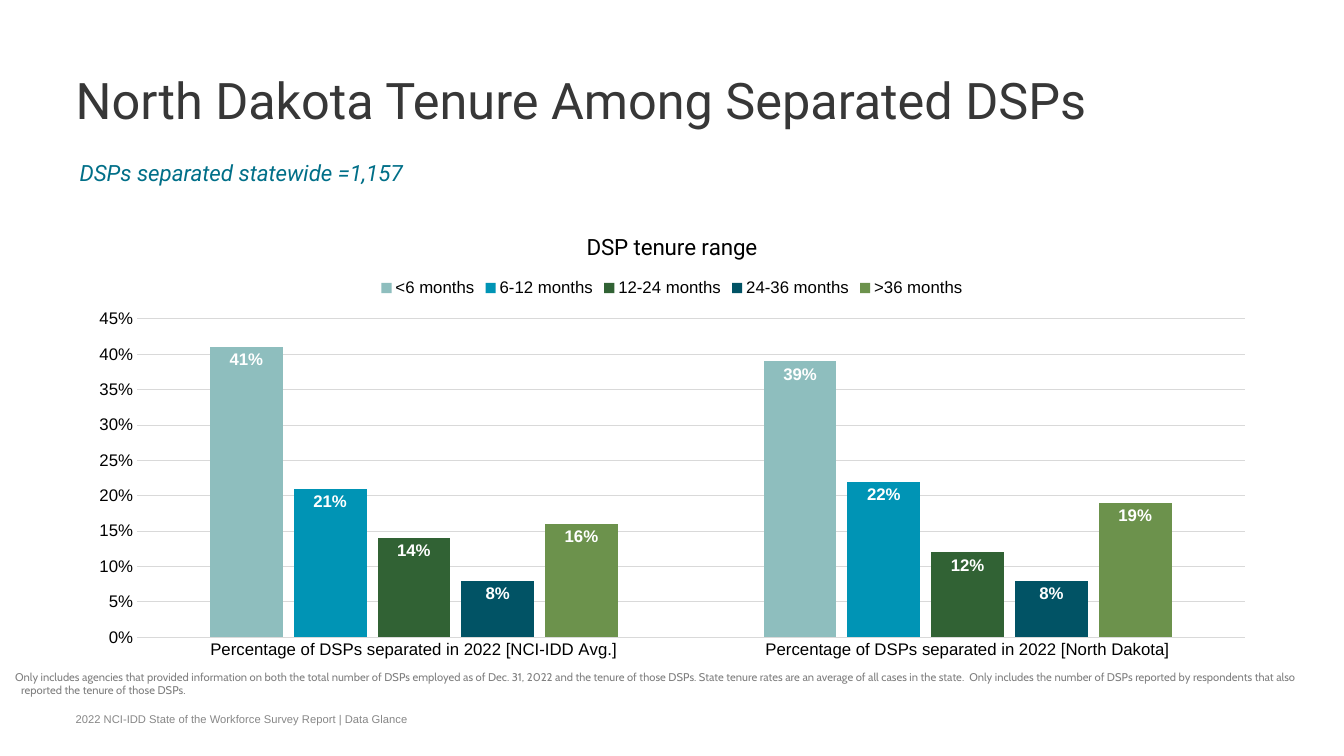
from pptx import Presentation
from pptx.chart.data import CategoryChartData
from pptx.dml.color import RGBColor
from pptx.enum.chart import XL_CHART_TYPE as CHART, XL_LABEL_POSITION as LABEL
from pptx.enum.chart import XL_LEGEND_POSITION as LEGEND, XL_TICK_MARK as TICK
from pptx.enum.text import MSO_ANCHOR as ANCHOR, MSO_AUTO_SIZE as AUTO, PP_ALIGN as ALIGN
from pptx.util import Inches, Pt

MARGIN, CONTENT_W = 0.75, 11.83
GRID = "D9D9D9"
SERIES = [
    ("<6 months", (0.41, 0.39), "8EBEBE"),
    ("6-12 months", (0.21, 0.22), "0094B5"),
    ("12-24 months", (0.14, 0.12), "316234"),
    ("24-36 months", (0.08, 0.08), "015365"),
    (">36 months", (0.16, 0.19), "6C924C"),
]


def style_font(font, size, color, name="Arial", bold=False, italic=False):
    font.size, font.name, font.bold, font.italic = Pt(size), name, bold, italic
    font.color.rgb = RGBColor.from_string(color)


def fill_text(sp, text, size, color, name="Arial", italic=False, anchor=ANCHOR.TOP):
    """Set one unpadded, wrapped, left-aligned paragraph and return it."""
    tf = sp.text_frame
    tf.text = text
    tf.word_wrap, tf.auto_size, tf.vertical_anchor = True, AUTO.NONE, anchor
    tf.margin_left = tf.margin_top = tf.margin_right = tf.margin_bottom = 0
    p = tf.paragraphs[0]
    p.alignment = ALIGN.LEFT
    style_font(p.runs[0].font, size, color, name, italic=italic)
    return p


prs = Presentation()
prs.slide_width, prs.slide_height = Inches(13.33), Inches(7.5)
s = prs.slides.add_slide(prs.slide_layouts[5])

# Tenure chart
data = CategoryChartData(number_format="0%")
data.categories = [f"Percentage of DSPs separated in 2022 [{group}]"
                   for group in ("NCI-IDD Avg.", "North Dakota")]
for name, values, color in SERIES:
    data.add_series(name, values)
chart = s.shapes.add_chart(CHART.COLUMN_CLUSTERED, Inches(MARGIN), Inches(2.13),
                           Inches(CONTENT_W), Inches(4.5), data).chart
style_font(chart.font, 12, "000000")
chart.has_title = True
chart.chart_title.include_in_layout = False
p = chart.chart_title.text_frame.paragraphs[0]
p.text = "DSP tenure range"
style_font(p.runs[0].font, 16, "000000", "Roboto")

chart.has_legend = True
chart.legend.position = LEGEND.TOP
chart.legend.include_in_layout = False
style_font(chart.legend.font, 12, "000000")

cat_axis, val_axis = chart.category_axis, chart.value_axis
for axis in (cat_axis, val_axis):
    axis.major_tick_mark = axis.minor_tick_mark = TICK.NONE
    style_font(axis.tick_labels.font, 12, "000000")
val_axis.minimum_scale, val_axis.maximum_scale, val_axis.major_unit = 0, 0.45, 0.05
val_axis.tick_labels.number_format = "0%"
val_axis.tick_labels.number_format_is_linked = False
val_axis.format.line.fill.background()
for line in (cat_axis.format.line, val_axis.major_gridlines.format.line):
    line.color.rgb = RGBColor.from_string(GRID)
    line.width = Pt(0.75)

plot = chart.plots[0]
plot.gap_width, plot.overlap, plot.vary_by_categories = 200, -15, False
for series, (name, values, color) in zip(plot.series, SERIES):
    series.format.fill.solid()
    series.format.fill.fore_color.rgb = RGBColor.from_string(color)
    labels = series.data_labels
    labels.show_value, labels.position = True, LABEL.INSIDE_END
    labels.number_format, labels.number_format_is_linked = "0%", False
    style_font(labels.font, 12, "FFFFFF", bold=True)

# Title and surrounding text
title = s.shapes.title
title.left, title.top = Inches(MARGIN), Inches(0.75)
title.width, title.height = Inches(CONTENT_W), Inches(1.2)
p = fill_text(title, "North Dakota Tenure Among Separated DSPs", 36, "373737", "Roboto")
p.line_spacing = 0.9

footer = s.shapes.add_textbox(Inches(MARGIN), Inches(7.05), Inches(7.86), Inches(0.15))
fill_text(footer, "2022 NCI-IDD State of the Workforce Survey Report | Data Glance",
          8, "878787", anchor=ANCHOR.BOTTOM)

subtitle = s.shapes.add_textbox(Inches(0.79), Inches(1.45), Inches(11.75), Inches(0.92))
p = fill_text(subtitle, "DSPs separated statewide =1,157", 16, "006F88", "Roboto", italic=True)
p.line_spacing = 1.5

note = s.shapes.add_textbox(Inches(0.15), Inches(6.65), Inches(12.95), Inches(0.53))
p = fill_text(
    note,
    "Only includes agencies that provided information on both the total number of DSPs "
    "employed as of Dec. 31, 2022 and the tenure of those DSPs. State tenure rates are an "
    "average of all cases in the state.  Only includes the number of DSPs reported by "
    "respondents that also reported the tenure of those DSPs.",
    8, "7F7F7F", "Cabin")
p.space_after = Pt(6)
pPr = p._p.get_or_add_pPr()
pPr.set("marL", str(Inches(0.06)))
pPr.set("indent", str(-Inches(0.06)))

prs.save("out.pptx")
